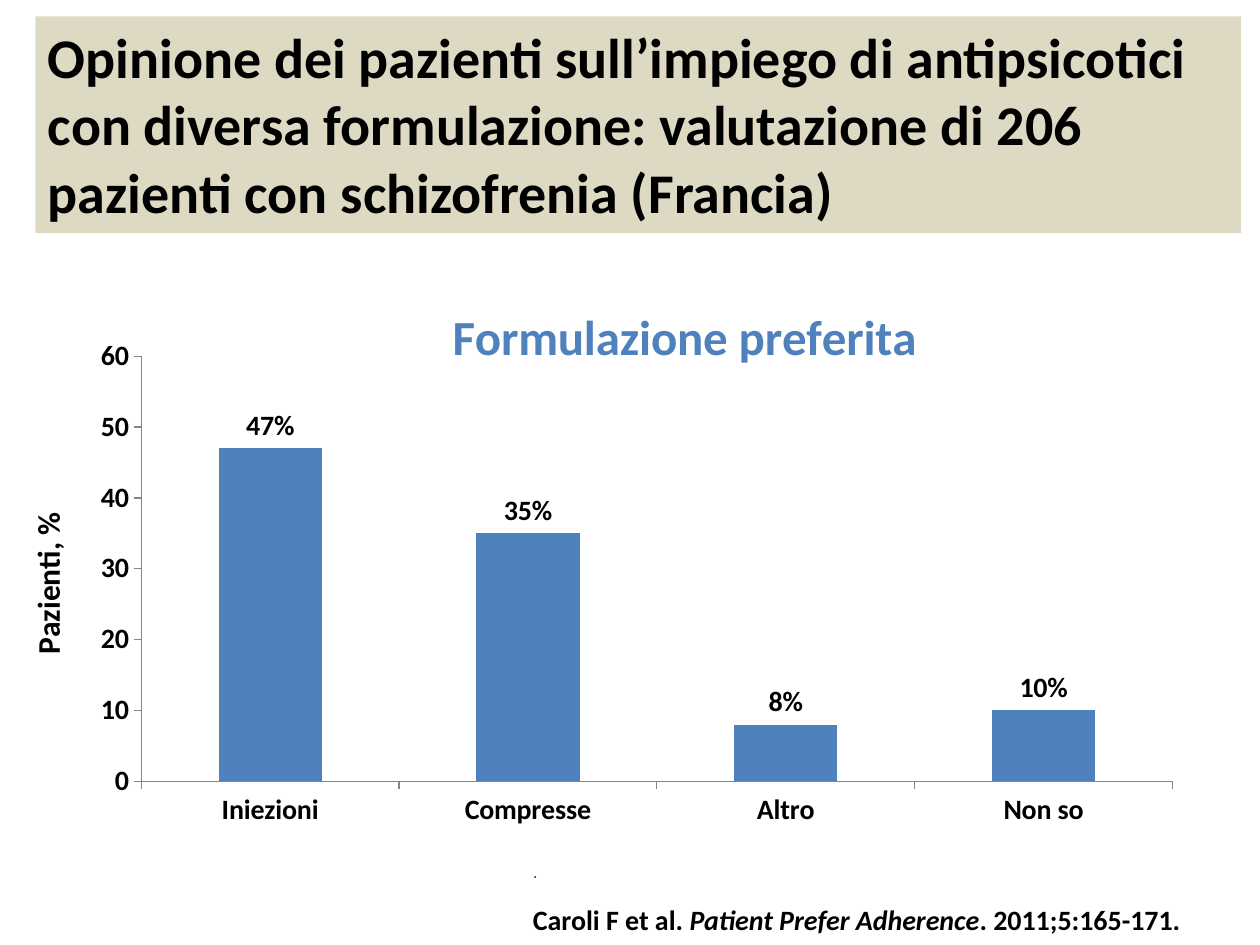
from pptx import Presentation
from pptx.chart.data import CategoryChartData
from pptx.dml.color import RGBColor
from pptx.enum.chart import XL_CHART_TYPE as ChartType, XL_LABEL_POSITION as LabelPosition
from pptx.enum.chart import XL_TICK_MARK as TickMark
from pptx.enum.text import MSO_ANCHOR as Anchor, MSO_AUTO_SIZE as AutoSize, PP_ALIGN as Align
from pptx.oxml import parse_xml
from pptx.oxml.ns import nsdecls, qn
from pptx.util import Inches, Pt

BLACK, BLUE, SAND, GREY = "000000", "4F81BD", "DDD9C3", "868686"


def color(value):
    """Turn a hex string into a colour."""
    return RGBColor.from_string(value)


def format_font(font, size=16, name="Calibri", fill=BLACK, bold=True, italic=False):
    """Apply the slide's text format to a font."""
    font.size, font.name, font.bold, font.italic = Pt(size), name, bold, italic
    font.color.rgb = color(fill)


def add_text(paragraph, text, **text_format):
    """Add a formatted run to a paragraph."""
    run = paragraph.add_run()
    run.text = text
    format_font(run.font, **text_format)


def place(shape, box):
    """Move a shape to a box given in inches."""
    shape.left, shape.top, shape.width, shape.height = map(Inches, box)


def set_layout(parent, index, target=None, **fractions):
    """Give a chart part a manual layout in fractions of the chart."""
    for layout in parent.findall(qn("c:layout")):
        parent.remove(layout)
    values = [("layoutTarget", target)] if target else []
    values += [(f"{key}Mode", "edge") for key in ("x", "y")]
    values += fractions.items()
    body = "".join(f'<c:{tag} val="{value}"/>' for tag, value in values)
    parent.insert(index, parse_xml(
        f"<c:layout {nsdecls('c')}><c:manualLayout>{body}</c:manualLayout></c:layout>"))


def add_heading(slide, box):
    """Fill the title placeholder as a sand-coloured banner."""
    title = slide.shapes.title
    place(title, box)
    title.fill.solid()
    title.fill.fore_color.rgb = color(SAND)
    frame = title.text_frame
    frame.word_wrap, frame.vertical_anchor = True, Anchor.TOP
    frame.auto_size = AutoSize.NONE
    paragraph = frame.paragraphs[0]
    paragraph.alignment = Align.LEFT
    add_text(paragraph, "Opinione dei pazienti sull’impiego di antipsicotici con diversa "
             "formulazione: valutazione di 206 pazienti con schizofrenia (Francia)", size=32)


def format_axis(axis):
    """Set the line, ticks and labels shared by both axes."""
    axis.has_major_gridlines = False
    axis.major_tick_mark = TickMark.OUTSIDE
    axis.format.line.color.rgb = color(GREY)
    axis.format.line.width = Pt(0.75)
    format_font(axis.tick_labels.font)


def add_preference_chart(slide, box):
    """Draw the column chart of preferred formulations."""
    data = CategoryChartData(number_format='0"%"')
    data.categories = ["Iniezioni", "Compresse", "Altro", "Non so"]
    data.add_series("Pazienti", [47, 35, 8, 10])
    chart = slide.shapes.add_chart(ChartType.COLUMN_CLUSTERED, *map(Inches, box), data).chart
    format_font(chart.font, bold=False)
    chart.has_legend = False

    chart.has_title = True
    title = chart.chart_title
    add_text(title.text_frame.paragraphs[0], "Formulazione preferita", size=28, fill=BLUE)
    set_layout(title._element, 1, x=0.36, y=0.01)
    title._element.find(qn("c:overlay")).set("val", "1")
    plot_area = chart._chartSpace.chart.plotArea
    set_layout(plot_area, 0, target="inner", x=0.106, y=0.122, w=0.866, h=0.779)

    format_axis(chart.category_axis)
    value_axis = chart.value_axis
    format_axis(value_axis)
    value_axis.minimum_scale, value_axis.maximum_scale, value_axis.major_unit = 0, 60, 10
    value_axis.tick_labels.number_format = "0"
    value_axis.tick_labels.number_format_is_linked = False
    add_text(value_axis.axis_title.text_frame.paragraphs[0], "Pazienti, %", size=18)

    plot = chart.plots[0]
    plot.gap_width, plot.vary_by_categories = 150, False
    fill = plot.series[0].format.fill
    fill.solid()
    fill.fore_color.rgb = color(BLUE)
    plot.has_data_labels = True
    labels = plot.data_labels
    labels.show_value, labels.position = True, LabelPosition.OUTSIDE_END
    labels.number_format, labels.number_format_is_linked = '0"%"', False
    format_font(labels.font)


def add_citation(slide, box):
    """Write the literature reference below the chart."""
    frame = slide.shapes.add_textbox(*map(Inches, box)).text_frame
    frame.word_wrap, frame.vertical_anchor = True, Anchor.BOTTOM
    frame.margin_left = Inches(0.29)
    add_text(frame.paragraphs[0], ".", size=10, name="Arial", fill="00568D", bold=False)
    reference = frame.add_paragraph()
    reference.space_before = Pt(12)
    add_text(reference, "Caroli F et al. ")
    add_text(reference, "Patient Prefer Adherence", italic=True)
    add_text(reference, ". 2011;5:165-171.")


def main():
    """Build and save the slide."""
    presentation = Presentation()
    presentation.slide_width, presentation.slide_height = Inches(10), Inches(7.5)
    slide = presentation.slides.add_slide(presentation.slide_layouts.get_by_name("Title Only"))
    add_citation(slide, (3.94, 6.77, 6.07, 0.71))
    add_preference_chart(slide, (0.12, 2.3, 9.45, 4.33))
    add_heading(slide, (0.28, 0.13, 9.57, 1.72))
    presentation.save("out.pptx")


if __name__ == "__main__":
    main()
